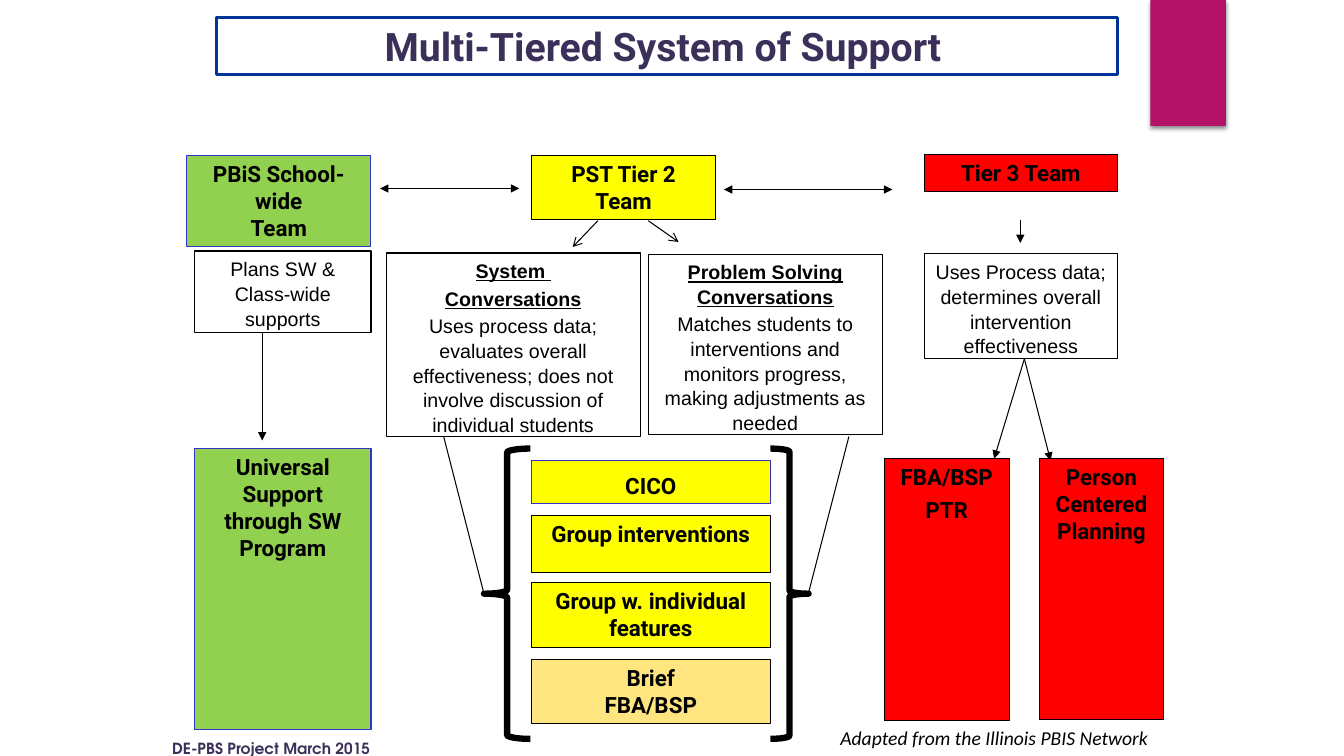
import dataclasses
import typing

import lxml.etree
import pptx
import pptx.dml.color
import pptx.enum.shapes
import pptx.enum.text
import pptx.oxml.ns
import pptx.util

SCALE = 9144
BLACK, WHITE, YELLOW, RED = "000000", "FFFFFF", "FFFF00", "FF0000"
GREEN, BLUE, PURPLE = "92D050", "3333CC", "3B3059"
SHAPE = pptx.enum.shapes.MSO_SHAPE
ALIGN = pptx.enum.text.PP_ALIGN
Rect = tuple[int, int, int, int]


@dataclasses.dataclass
class Team:
    area: Rect
    lines: list[str]
    fill: str
    edge: str = BLACK
    gap: float = 0
    top: int = 5
    alpha: int = 100


@dataclasses.dataclass
class Note:
    area: Rect
    heads: list[str]
    body: str


@dataclasses.dataclass
class Link:
    start: tuple[int, int]
    end: tuple[int, int]
    tail: str = ""
    head: str = ""


TEAMS = [
    Team((527, 457, 237, 43), ["CICO"], YELLOW, BLUE, top=11),
    Team((527, 511, 237, 57), ["Group interventions"], YELLOW),
    Team((527, 578, 237, 64), ["Group w. individual", "features"], YELLOW),
    Team((527, 654, 237, 64), ["Brief", "FBA/BSP"], "FFCC00", alpha=50),
    Team((877, 455, 124, 260), ["FBA/BSP", "PTR"], RED, gap=4),
    Team((1031, 455, 123, 259), ["Person Centered Planning"], RED),
    Team((917, 153, 191, 37), ["Tier 3 Team"], RED),
    Team((527, 154, 183, 64), ["PST Tier 2 Team"], YELLOW),
    Team((185, 154, 183, 91), ["PBiS School-wide", "Team"], GREEN, BLUE),
    Team((193, 445, 175, 279), ["Universal Support through SW Program"], GREEN, BLUE),
]
NOTES = [
    Note((193, 249, 175, 81), [], "Plans SW & Class-wide supports"),
    Note((383, 251, 252, 182), ["System ", "Conversations"],
         "Uses process data; evaluates overall effectiveness; "
         "does not involve discussion of individual students"),
    Note((643, 252, 232, 179), ["Problem Solving Conversations"],
         "Matches students to interventions and monitors progress, "
         "making adjustments as needed"),
    Note((917, 252, 191, 104), [],
         "Uses Process data; determines overall intervention effectiveness"),
]
LINKS = [
    Link((842, 433), (802, 588)),
    Link((440, 433), (480, 589)),
    Link((260, 330), (260, 437), "triangle"),
    Link((1016, 356), (986, 455), "triangle"),
    Link((1016, 356), (1042, 457), "triangle"),
    Link((377, 187), (515, 187), "triangle", "triangle"),
    Link((718, 188), (885, 188), "triangle", "triangle"),
    Link((1012, 218), (1012, 241), "triangle"),
    Link((593, 219), (568, 245), "arrow"),
    Link((643, 219), (673, 240), "arrow"),
]
BRACES = [
    (SHAPE.LEFT_BRACE, (480, 445, 46, 288)),
    (SHAPE.RIGHT_BRACE, (764, 445, 38, 288)),
]


def px(count: int) -> int:
    return count * SCALE


def tint(color: typing.Any, code: str) -> None:
    color.rgb = pptx.dml.color.RGBColor.from_string(code)


def add(parent: typing.Any, tag: str, **attrs: str) -> typing.Any:
    item = lxml.etree.SubElement(parent, pptx.oxml.ns.qn(tag))
    for name, value in attrs.items():
        item.set(name, value)
    return item


def paint(shape: typing.Any, fill: str = "", edge: str = "",
          width: float = 0.75, alpha: int = 100) -> None:
    if fill:
        shape.fill.solid()
        tint(shape.fill.fore_color, fill)
        if alpha < 100:
            code = shape.fill._xPr.find(".//" + pptx.oxml.ns.qn("a:srgbClr"))
            add(code, "a:alpha", val=str(alpha * 1000))
    else:
        shape.fill.background()
    if edge:
        tint(shape.line.color, edge)
        shape.line.width = pptx.util.Pt(width)
    else:
        shape.line.fill.background()


def draw(slide: typing.Any, kind: typing.Any, area: Rect, **look: typing.Any) -> typing.Any:
    shape = slide.shapes.add_shape(kind, *map(px, area))
    shape.shadow.inherit = False
    paint(shape, **look)
    return shape


def write(shape: typing.Any, lines: list[str], *, size: int, face: str,
          color: str = BLACK, bold: bool = False, slant: bool = False,
          heads: int = 0, gap: float = 0, space: float = 1.0, top: int = 5,
          right: int = 10, align: typing.Any = ALIGN.CENTER,
          anchor: typing.Any = pptx.enum.text.MSO_ANCHOR.TOP) -> None:
    frame = shape.text_frame
    frame.word_wrap = True
    frame.auto_size = pptx.enum.text.MSO_AUTO_SIZE.NONE
    frame.vertical_anchor = anchor
    frame.margin_left, frame.margin_right = px(10), px(right)
    frame.margin_top, frame.margin_bottom = px(top), px(5)
    for rank, line in enumerate(lines):
        para = frame.add_paragraph() if rank else frame.paragraphs[0]
        para.alignment = align
        para.line_spacing = space
        para.space_before = pptx.util.Pt(gap if rank else 0)
        run = para.add_run()
        run.text = line
        font = run.font
        font.size, font.name = pptx.util.Pt(size), face
        font.bold = bold or rank < heads
        font.italic = slant
        font.underline = rank < heads
        tint(font.color, color)


def join(slide: typing.Any, link: Link) -> None:
    line = slide.shapes.add_connector(
        pptx.enum.shapes.MSO_CONNECTOR.STRAIGHT, *map(px, link.start + link.end))
    tint(line.line.color, BLACK)
    line.line.width = pptx.util.Pt(0.75)
    stroke = line.line._get_or_add_ln()
    for tag, tip in (("a:headEnd", link.head), ("a:tailEnd", link.tail)):
        if tip:
            add(stroke, tag, type=tip)
    add(line._element.spPr, "a:effectLst")


def ribbon(slide: typing.Any) -> None:
    shape = draw(slide, SHAPE.RECTANGLE, (1141, 0, 75, 125), fill="B31166")
    effect = shape._element.spPr.find(pptx.oxml.ns.qn("a:effectLst"))
    shade = add(effect, "a:outerShdw", blurRad="38100", dist="25400",
                dir="5400000", rotWithShape="0")
    add(add(shade, "a:srgbClr", val=BLACK), "a:alpha", val="45000")


def main() -> None:
    deck = pptx.Presentation()
    deck.slide_width, deck.slide_height = px(1333), px(750)
    slide = deck.slides.add_slide(deck.slide_layouts[5])
    ribbon(slide)

    title = slide.shapes.title
    title.left, title.top, title.width, title.height = map(px, (215, 17, 893, 57))
    paint(title, WHITE, "003399", 2.25)
    write(title, ["Multi-Tiered System of Support"], size=28, face="Roboto",
          color=PURPLE, bold=True, right=18,
          anchor=pptx.enum.text.MSO_ANCHOR.MIDDLE)

    for link in LINKS:
        join(slide, link)
    for team in TEAMS:
        box = draw(slide, SHAPE.RECTANGLE, team.area, fill=team.fill,
                   edge=team.edge, alpha=team.alpha)
        write(box, team.lines, size=16, face="Roboto", bold=True,
              gap=team.gap, top=team.top)
    for note in NOTES:
        box = draw(slide, SHAPE.RECTANGLE, note.area, fill=WHITE, edge=BLACK)
        write(box, note.heads + [note.body], size=14, face="Arial",
              heads=len(note.heads), gap=2, space=1.05)
    for kind, area in BRACES:
        draw(slide, kind, area, edge=BLACK, width=4.5)

    credit = slide.shapes.add_textbox(*map(px, (737, 715, 417, 34)))
    write(credit, ["Adapted from the Illinois PBIS Network"], size=14,
          face="Calibri", slant=True, right=15, align=ALIGN.RIGHT)
    source = slide.shapes.add_textbox(*map(px, (161, 728, 500, 29)))
    write(source, ["DE-PBS Project March 2015"], size=11,
          face="TeX Gyre Adventor", color=PURPLE, bold=True, align=ALIGN.LEFT)
    deck.save("out.pptx")


if __name__ == "__main__":
    main()
